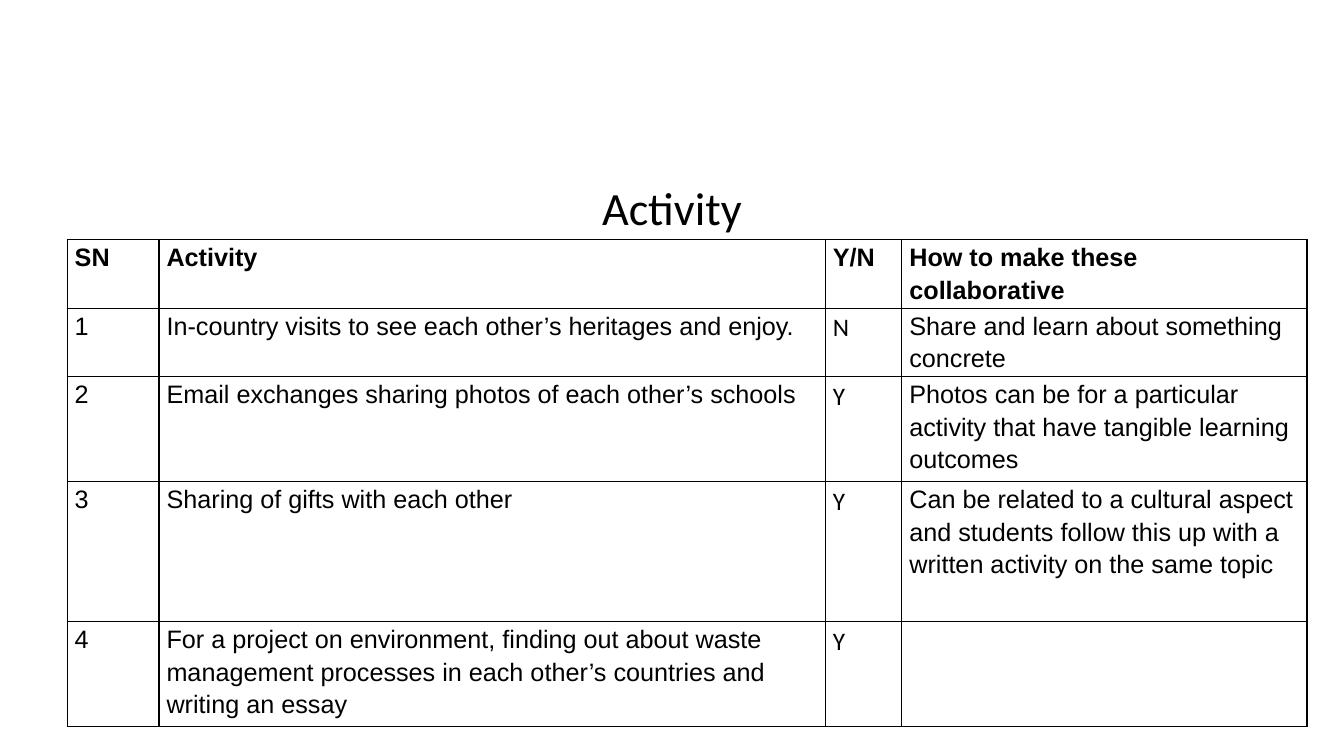
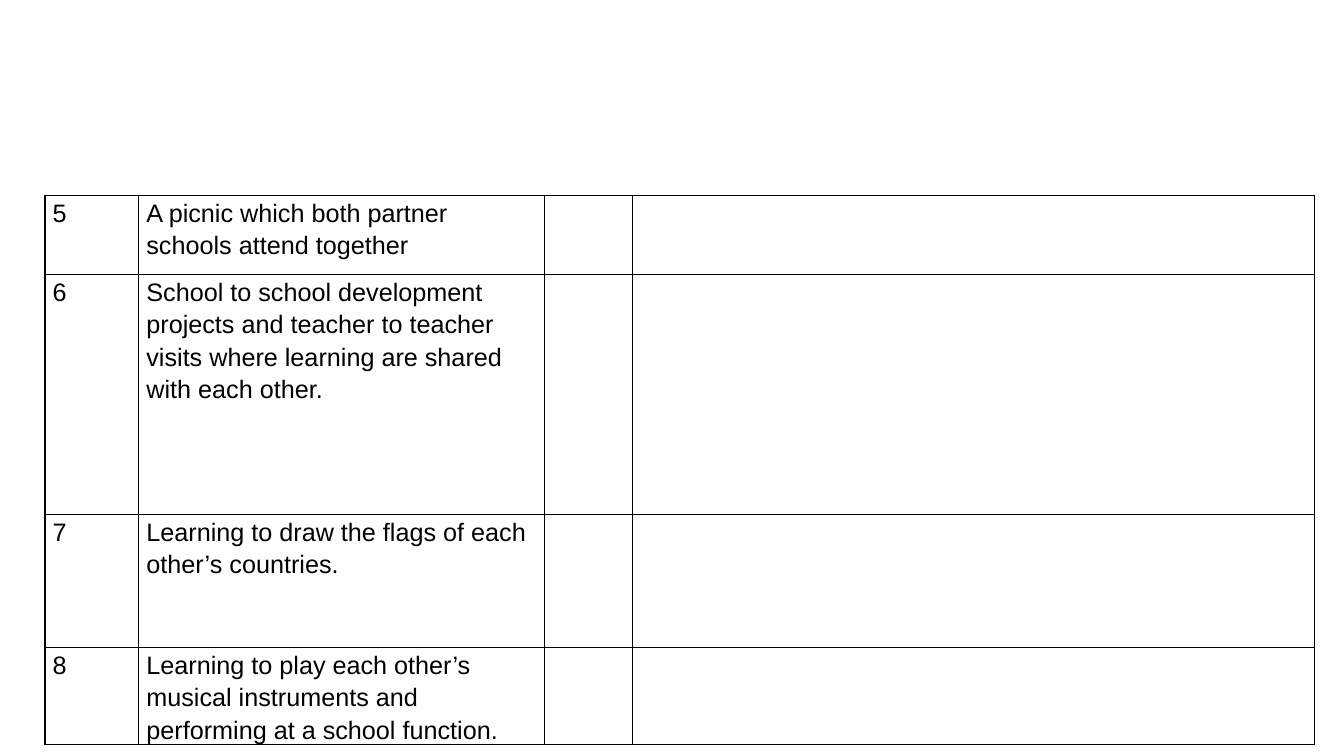
from lxml.etree import SubElement
from pptx import Presentation
from pptx.dml.color import RGBColor
from pptx.enum.text import MSO_ANCHOR, PP_ALIGN
from pptx.oxml import parse_xml
from pptx.oxml.ns import nsdecls
from pptx.util import Pt

# Shared style
BLACK = RGBColor(0x00, 0x00, 0x00)
TITLE_FONT, TITLE_SIZE = "Calibri", 33
BODY_FONT, BODY_SIZE = "Arial", 18
ANSWER_FONT = "Calibri"
ANSWER_COLUMN = 2
LINE_SPACING = 1.15
SIDE_MARGIN = 5.4
BORDER_WIDTH = 1

TITLE_BOX = (48, 126, 864, 44)

# Tables: left and top, column widths, row heights, cell texts
FIRST_TABLE = {
    "corner": (48, 171.2),
    "widths": (65.6, 476, 54.6, 289.4),
    "heights": (49, 49, 75, 100, 75),
    "rows": (
        ("SN", "Activity", "Y/N", "How to make these collaborative"),
        ("1", "In-country visits to see each other’s heritages and enjoy.", "N",
         "Share and learn about something concrete"),
        ("2", "Email exchanges sharing photos of each other’s schools", "Y",
         "Photos can be for a particular activity that have tangible learning outcomes"),
        ("3", "Sharing of gifts with each other", "Y",
         "Can be related to a cultural aspect and students follow this up with a "
         "written activity on the same topic"),
        ("4", "For a project on environment, finding out about waste management "
         "processes in each other’s countries and writing an essay", "Y", ""),
    ),
    "has_header": True,
}
SECOND_TABLE = {
    "corner": (32.2, 139.5),
    "widths": (67, 290, 62.6, 487.4),
    "heights": (56.4, 171.4, 95, 68.4),
    "rows": (
        ("5", "A picnic which both partner schools attend together", "", ""),
        ("6", "School to school development projects and teacher to teacher visits "
         "where learning are shared with each other.", "", ""),
        ("7", "Learning to draw the flags of each other’s countries.", "", ""),
        ("8", "Learning to play each other’s musical instruments and performing at "
         "a school function.", "", ""),
    ),
    "has_header": False,
}


def add_span(para, text, font_name, size, bold=False):
    span = para.add_run()
    span.text = text
    span.font.name = font_name
    span.font.size = Pt(size)
    span.font.bold = bold
    span.font.color.rgb = BLACK


def place_title(page, text, left, top, width, height):
    box = page.shapes.title
    box.left, box.top, box.width, box.height = map(Pt, (left, top, width, height))
    box.text_frame.vertical_anchor = MSO_ANCHOR.MIDDLE
    para = box.text_frame.paragraphs[0]
    para.alignment = PP_ALIGN.CENTER
    add_span(para, text, TITLE_FONT, TITLE_SIZE)


def draw_borders(cell):
    properties = cell._tc.get_or_add_tcPr()
    for position, side in enumerate(("lnL", "lnR", "lnT", "lnB")):
        line = parse_xml(f'<a:{side} {nsdecls("a")} w="{Pt(BORDER_WIDTH)}"/>')
        fill = SubElement(line, "{%s}solidFill" % line.nsmap["a"])
        SubElement(fill, "{%s}srgbClr" % line.nsmap["a"], val=str(BLACK))
        properties.insert(position, line)


def fill_cell(cell, text, font_name, bold):
    cell.margin_left = cell.margin_right = Pt(SIDE_MARGIN)
    cell.margin_top = cell.margin_bottom = Pt(0)
    cell.fill.background()
    draw_borders(cell)
    if text:
        para = cell.text_frame.paragraphs[0]
        para.line_spacing = LINE_SPACING
        add_span(para, text, font_name, BODY_SIZE, bold)


def place_table(page, corner, widths, heights, rows, has_header):
    left, top = corner
    frame = page.shapes.add_table(len(heights), len(widths), Pt(left), Pt(top),
                                  Pt(sum(widths)), Pt(sum(heights)))
    table = frame.table
    table.first_row = has_header
    table.horz_banding = False
    for column, width in zip(table.columns, widths):
        column.width = Pt(width)
    for row, height in zip(table.rows, heights):
        row.height = Pt(height)
    for row_index, texts in enumerate(rows):
        is_header = has_header and row_index == 0
        for column_index, text in enumerate(texts):
            is_answer = column_index == ANSWER_COLUMN and not is_header
            fill_cell(table.cell(row_index, column_index), text,
                      ANSWER_FONT if is_answer else BODY_FONT, is_header)


def main():
    deck = Presentation()
    deck.slide_width, deck.slide_height = Pt(960), Pt(540)
    title_only, blank = deck.slide_layouts[5], deck.slide_layouts[6]

    # Activities 1 to 4
    page = deck.slides.add_slide(title_only)
    place_title(page, "Activity", *TITLE_BOX)
    place_table(page, **FIRST_TABLE)

    # Activities 5 to 8
    page = deck.slides.add_slide(blank)
    place_table(page, **SECOND_TABLE)

    deck.save("out.pptx")


if __name__ == "__main__":
    main()
